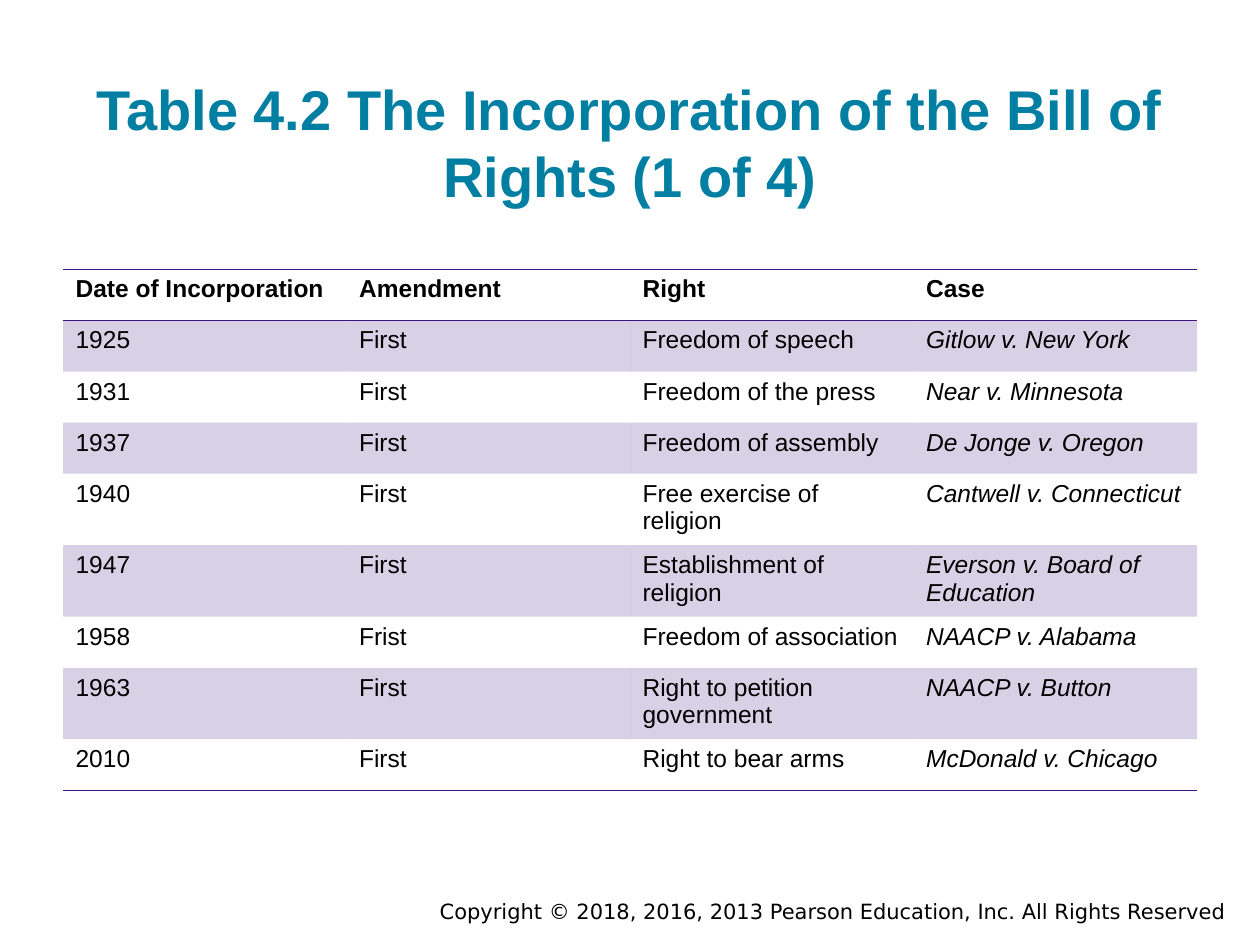
import pptx
import pptx.dml.color
import pptx.enum.text
import pptx.oxml
import pptx.oxml.ns
import pptx.util

Pt = pptx.util.Pt
RGBColor = pptx.dml.color.RGBColor
Align = pptx.enum.text.PP_ALIGN
Anchor = pptx.enum.text.MSO_ANCHOR

TEAL = RGBColor(0x00, 0x7F, 0xA3)
PURPLE = RGBColor(0x3C, 0x15, 0x81)
BLACK = RGBColor(0, 0, 0)
PLAIN_TABLE_STYLE = "{2D5ABB26-0587-4C30-8999-92F81FD0307C}"
BAND_OPACITY = 20

HEADINGS = ("Date of Incorporation", "Amendment", "Right", "Case")
INCORPORATIONS = (
    ("1925", "First", "Freedom of speech", "Gitlow v. New York"),
    ("1931", "First", "Freedom of the press", "Near v. Minnesota"),
    ("1937", "First", "Freedom of assembly", "De Jonge v. Oregon"),
    ("1940", "First", "Free exercise of religion", "Cantwell v. Connecticut"),
    ("1947", "First", "Establishment of religion", "Everson v. Board of Education"),
    ("1958", "Frist", "Freedom of association", "NAACP v. Alabama"),
    ("1963", "First", "Right to petition government", "NAACP v. Button"),
    ("2010", "First", "Right to bear arms", "McDonald v. Chicago"),
)


class SlideBuilder:
    """Holds the style and the current slide."""

    font = "Arial"
    table_size = 14

    def __init__(self, slide):
        self.slide = slide

    def run(self, paragraph, text, size, color=BLACK, font=None, bold=False, italic=False):
        run = paragraph.add_run()
        run.text = text
        run.font.name = font or self.font
        run.font.size = Pt(size)
        run.font.color.rgb = color
        run.font.bold = bold
        run.font.italic = italic

    def text(self, box, text, size, align, anchor, inset, **style):
        frame = self.slide.shapes.add_textbox(*map(Pt, box)).text_frame
        frame.word_wrap = True
        frame.vertical_anchor = anchor
        frame.margin_left = frame.margin_right = Pt(7.2)
        frame.margin_top = frame.margin_bottom = Pt(inset)
        paragraph = frame.paragraphs[0]
        paragraph.alignment = align
        self.run(paragraph, text, size, **style)

    def rule(self, cell, tag):
        """Draw one horizontal cell border: lnT or lnB."""
        cell._tc.get_or_add_tcPr().append(pptx.oxml.parse_xml(
            f'<a:{tag} {pptx.oxml.ns.nsdecls("a")} w="{Pt(1)}"><a:solidFill>'
            f'<a:srgbClr val="{PURPLE}"/></a:solidFill></a:{tag}>'))

    def band(self, cell):
        cell.fill.solid()
        cell.fill.fore_color.rgb = PURPLE
        color = cell._tc.tcPr.find(".//" + pptx.oxml.ns.qn("a:srgbClr"))
        color.append(pptx.oxml.parse_xml(
            f'<a:alpha {pptx.oxml.ns.nsdecls("a")} val="{BAND_OPACITY * 1000}"/>'))

    def table(self, left, top, width, row_height, rows):
        last = len(rows) - 1
        table = self.slide.shapes.add_table(
            len(rows), len(rows[0]), Pt(left), Pt(top),
            Pt(width), Pt(row_height * len(rows))).table
        table._tbl.tblPr.find(pptx.oxml.ns.qn("a:tableStyleId")).text = PLAIN_TABLE_STYLE
        for r, row in enumerate(rows):
            for c, text in enumerate(row):
                cell = table.cell(r, c)
                self.run(cell.text_frame.paragraphs[0], text, self.table_size,
                         bold=r == 0, italic=r > 0 and c == len(row) - 1)
                # Borders precede the fill in the cell properties
                if r == 0:
                    self.rule(cell, "lnT")
                if r in (0, last):
                    self.rule(cell, "lnB")
                if r % 2:
                    self.band(cell)
                else:
                    cell.fill.background()


def main():
    deck = pptx.Presentation()
    deck.slide_width, deck.slide_height = Pt(720), Pt(540)
    builder = SlideBuilder(deck.slides.add_slide(deck.slide_layouts[6]))

    # Copyright line
    builder.text((144, 509.76, 563.76, 21.6),
                 "Copyright © 2018, 2016, 2013 Pearson Education, Inc. All Rights Reserved",
                 12, Align.RIGHT, Anchor.TOP, 3.6, font="DejaVu Sans")

    # Title
    builder.text((36, 21.6, 648, 105.12),
                 "Table 4.2 The Incorporation of the Bill of Rights (1 of 4)",
                 32, Align.CENTER, Anchor.BOTTOM, 7.2, color=TEAL, bold=True)

    # Incorporation table
    builder.table(36, 153.9, 648, 29.2, (HEADINGS, *INCORPORATIONS))

    deck.save("out.pptx")


if __name__ == "__main__":
    main()
